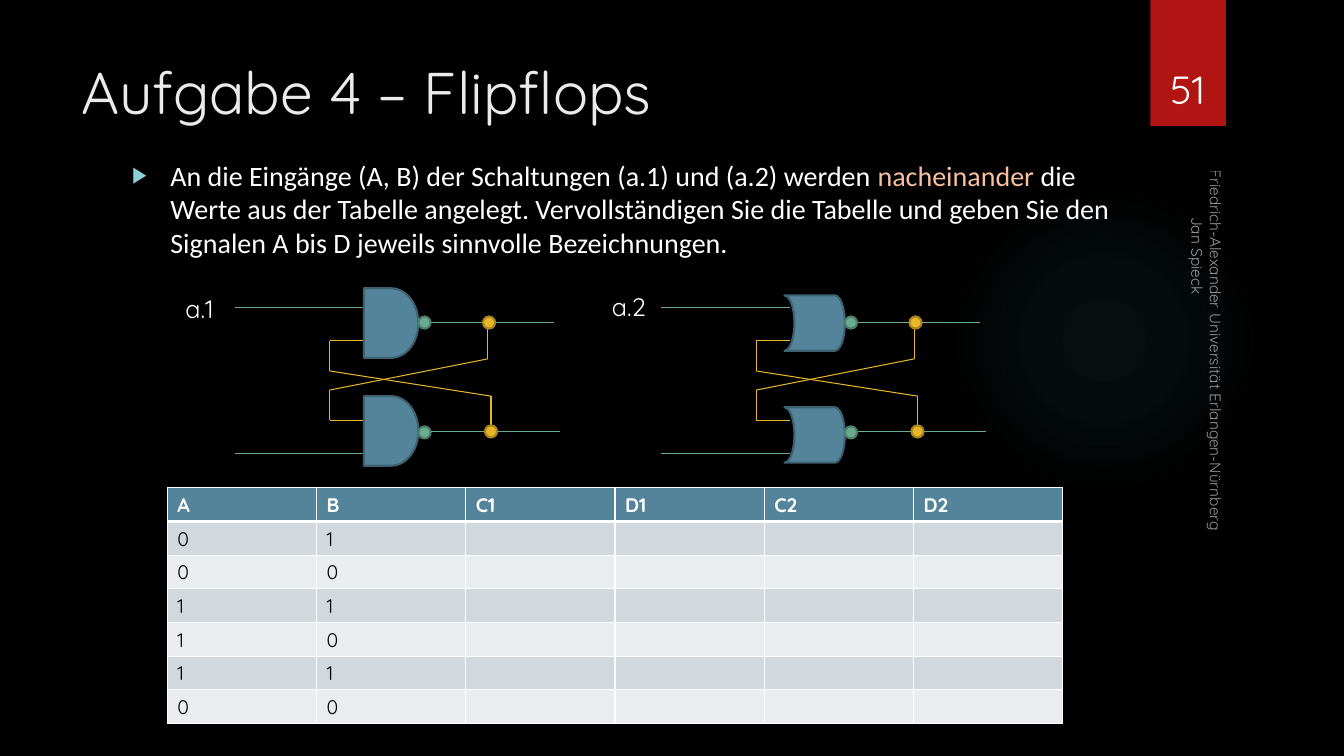
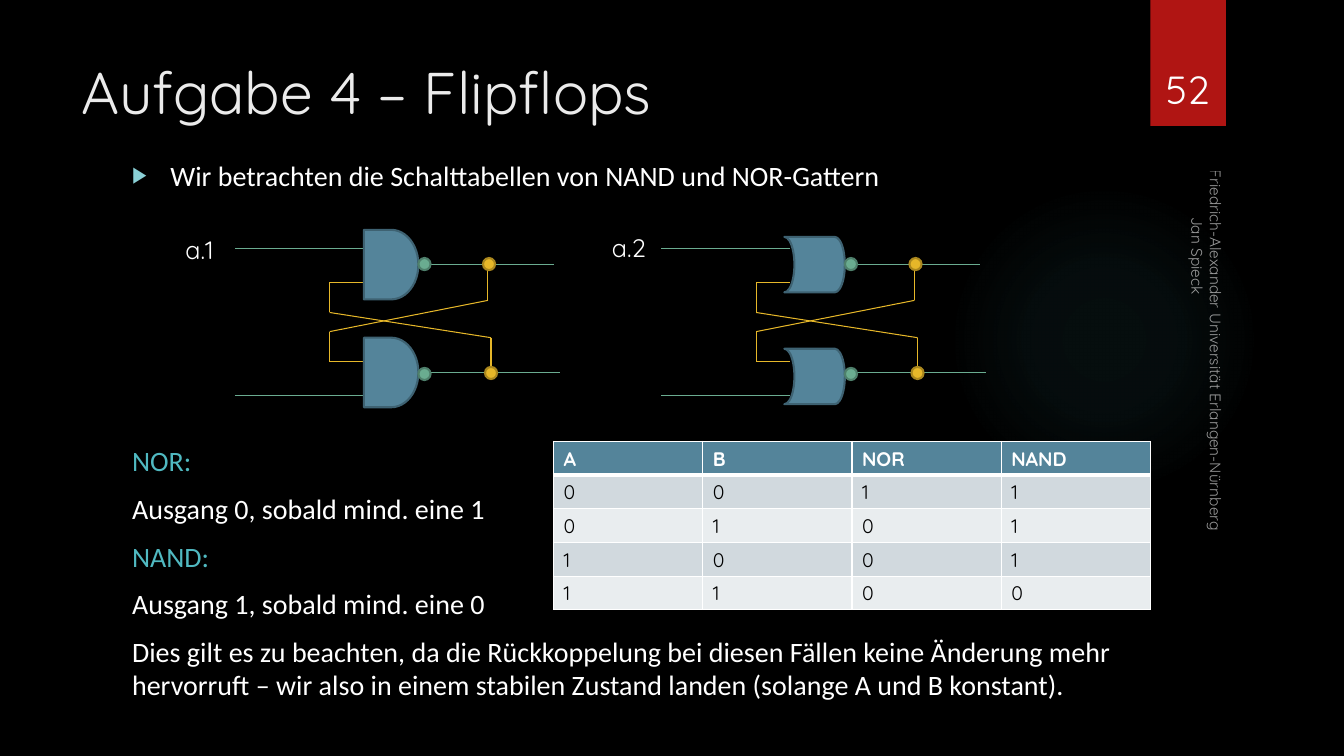
from itertools import pairwise

from lxml.etree import SubElement
from pptx import Presentation
from pptx.dml.color import RGBColor
from pptx.enum.shapes import MSO_CONNECTOR, MSO_SHAPE
from pptx.enum.text import MSO_ANCHOR, MSO_AUTO_SIZE, PP_ALIGN
from pptx.oxml import parse_xml
from pptx.oxml.ns import nsdecls, qn
from pptx.util import Emu, Pt

EMU_PER_PX = 9144  # 100 px to the inch

# Shared style
HEAD_FONT, BODY_FONT = "Quicksand", "Calibri"
BLACK, WHITE, TITLE = "000000", "FFFFFF", "EBEBEB"
RED, TEAL, BULLET, ACCENT = "B01513", "50B9C1", "8AD0D6", "F8C09F"
BLUE, BLUE_EDGE = "54849A", "3E6272"
GREEN, GREEN_EDGE = "6AAC90", "4E7F6B"
YELLOW, YELLOW_EDGE = "E6B729", "AA871E"
BANDS = ("E9EDEF", "D1D9DE")

# Gate: preset shape, left, tops, width, height, mirrored, label top
NAND = (MSO_SHAPE.FLOWCHART_DELAY, 128, (-19, 88), 54, 69, False, -19)
NOR = (MSO_SHAPE.FLOWCHART_STORED_DATA, 122, (-12, 99), 60, 55, True, -21)


def px(value):
    return Emu(value * EMU_PER_PX)


def rgb(code):
    return RGBColor.from_string(code)


def write(para, text, size=20, color=WHITE, font=BODY_FONT, bold=False,
          align=PP_ALIGN.LEFT, before=0, alpha=None):
    """Add one span of formatted text to a paragraph."""
    para.alignment = align
    para.space_before = Pt(before)
    span = para.add_run()
    span.text = text
    span.font.size = Pt(size)
    span.font.name = font
    span.font.bold = bold
    span.font.color.rgb = rgb(color)
    if alpha is not None:
        tint = span.font.fill._xPr.find(qn("a:solidFill"))[0]
        SubElement(tint, qn("a:alpha"), val=str(alpha * 1000))


def set_bullet(para, indent=38):
    """Give a paragraph a coloured triangle, or none when indent is 0."""
    props = para._p.get_or_add_pPr()
    props.set("marL", str(px(indent)))
    props.set("indent", str(px(-indent)))
    if not indent:
        SubElement(props, qn("a:buNone"))
        return
    tint = SubElement(props, qn("a:buClr"))
    SubElement(tint, qn("a:srgbClr"), val=BULLET)
    SubElement(props, qn("a:buSzPct"), val="80000")
    SubElement(props, qn("a:buFont"), typeface=BODY_FONT)
    SubElement(props, qn("a:buChar"), char="▶")


class Deck:
    def __init__(self):
        self.file = Presentation()
        self.file.slide_width, self.file.slide_height = px(1333), px(750)
        background = self.file.slide_master.background.fill
        background.solid()
        background.fore_color.rgb = rgb(BLACK)
        self.page = None

    # Page frame: glow, red band, title, footer, number
    def add_page(self, title, number):
        self.page = self.file.slides.add_slide(self.file.slide_layouts[1])
        self.glow()
        self.band()
        frame = self.placeholder(0, 71, 50, 1029, 153)
        write(frame.paragraphs[0], title, 42, TITLE, HEAD_FONT)
        self.footer()
        frame = self.text_box(1132, 32, 92, 84, anchor=MSO_ANCHOR.BOTTOM)
        write(frame.paragraphs[0], number, 28, font=HEAD_FONT,
              align=PP_ALIGN.CENTER)

    def glow(self):
        disc = self.shape(MSO_SHAPE.OVAL, 941, 183, 308, 308)
        stops = "".join(
            f'<a:gs pos="{place * 1000}"><a:srgbClr val="{TEAL}">'
            f'<a:alpha val="{alpha * 1000}"/></a:srgbClr></a:gs>'
            for place, alpha in ((0, 7), (36, 6), (69, 0)))
        gradient = parse_xml(
            f'<a:gradFill {nsdecls("a")}><a:gsLst>{stops}</a:gsLst>'
            '<a:path path="circle"><a:fillToRect l="50000" t="50000" '
            'r="50000" b="50000"/></a:path></a:gradFill>')
        props = disc._element.spPr
        props.replace(props.find(qn("a:noFill")), gradient)

    def band(self):
        band = self.shape(MSO_SHAPE.RECTANGLE, 1141, 0, 75, 125, RED)
        effects = band._element.spPr.find(qn("a:effectLst"))
        shadow = SubElement(effects, qn("a:outerShdw"), blurRad=str(Pt(3)),
                            dist=str(Pt(2)), dir="5400000")
        tint = SubElement(shadow, qn("a:srgbClr"), val=BLACK)
        SubElement(tint, qn("a:alpha"), val="45000")

    def footer(self):
        frame = self.text_box(979, 353, 422, 33, anchor=MSO_ANCHOR.BOTTOM,
                              turn=90)
        school, author = frame.paragraphs[0], frame.add_paragraph()
        author._p.get_or_add_pPr().set("marL", str(px(47)))
        for para, text in (
                (school, "Friedrich-Alexander Universität Erlangen-Nürnberg"),
                (author, "Jan Spieck")):
            write(para, text, 11, font=HEAD_FONT, alpha=60)

    # Text
    def placeholder(self, index, left, top, width, height):
        box = self.page.placeholders[index]
        box.left, box.top = px(left), px(top)
        box.width, box.height = px(width), px(height)
        frame = box.text_frame
        frame.auto_size = MSO_AUTO_SIZE.NONE
        frame.vertical_anchor = MSO_ANCHOR.TOP
        return frame

    def body(self, paragraphs):
        """Each paragraph: bullet indent, space before, (text, colour) spans."""
        frame = self.placeholder(1, 121, 152, 998, 551)
        for number, (indent, before, spans) in enumerate(paragraphs):
            para = frame.add_paragraph() if number else frame.paragraphs[0]
            set_bullet(para, indent)
            for text, color in spans:
                write(para, text, color=color, before=before)

    def text_box(self, left, top, width, height, anchor=MSO_ANCHOR.TOP,
                 wrap=True, turn=0):
        box = self.page.shapes.add_textbox(
            px(left), px(top), px(width), px(height))
        box.rotation = turn
        frame = box.text_frame
        frame.word_wrap = wrap
        frame.vertical_anchor = anchor
        return frame

    # Shapes and wires
    def shape(self, kind, left, top, width, height, fill=None, edge=None):
        shape = self.page.shapes.add_shape(
            kind, px(left), px(top), px(width), px(height))
        shape.shadow.inherit = False
        if fill:
            shape.fill.solid()
            shape.fill.fore_color.rgb = rgb(fill)
        else:
            shape.fill.background()
        if edge:
            shape.line.color.rgb = rgb(edge)
            shape.line.width = Pt(1.5)
        else:
            shape.line.fill.background()
        return shape

    def wire(self, color, left, top, *points):
        for (x1, y1), (x2, y2) in pairwise(points):
            line = self.page.shapes.add_connector(
                MSO_CONNECTOR.STRAIGHT, px(left + x1), px(top + y1),
                px(left + x2), px(top + y2))
            line.line.color.rgb = rgb(color)
            line.line.width = Pt(0.75)
            SubElement(line._element.spPr, qn("a:effectLst"))

    # Flip-flop whose upper input starts at left, top
    def flipflop(self, label, gate, left, top):
        kind, gate_left, gate_tops, width, height, mirrored, label_top = gate
        for points in (((0, 0), (128, 0)), ((0, 145), (128, 145)),
                       ((188, 15), (316, 15)), ((194, 123), (322, 123))):
            self.wire(GREEN, left, top, *points)
        self.wire(YELLOW, left, top,
                  (251, 21), (251, 51), (94, 82), (94, 112), (128, 112))
        self.wire(YELLOW, left, top,
                  (254, 117), (254, 88), (94, 63), (94, 33), (128, 33))
        for gate_top in gate_tops:
            symbol = self.shape(kind, left + gate_left, top + gate_top,
                                width, height, BLUE, BLUE_EDGE)
            if mirrored:
                symbol._element.spPr.find(qn("a:xfrm")).set("flipH", "1")
        for x, y, fill, edge in ((182, 9, GREEN, GREEN_EDGE),
                                 (182, 118, GREEN, GREEN_EDGE),
                                 (246, 9, YELLOW, YELLOW_EDGE),
                                 (248, 117, YELLOW, YELLOW_EDGE)):
            self.shape(MSO_SHAPE.OVAL, left + x, top + y, 12, 12, fill, edge)
        frame = self.text_box(left - 59, top + label_top, 58, 40, wrap=False)
        write(frame.paragraphs[0], label, 18, font=HEAD_FONT)

    def flipflops(self, top):
        self.flipflop("a.1", NAND, 233, top)
        self.flipflop("a.2", NOR, 656, top)

    # Truth table; short rows leave the remaining cells empty
    def table(self, left, top, header, rows):
        grid = self.page.shapes.add_table(
            len(rows) + 1, len(header), px(left), px(top),
            px(148 * len(header)), px(33 * (len(rows) + 1))).table
        for column in grid.columns:
            column.width = px(148)
        for r, values in enumerate([header, *rows]):
            grid.rows[r].height = px(33)
            for c in range(len(header)):
                cell = grid.cell(r, c)
                self.borders(cell, top=3 if r == 1 else 1,
                             bottom=1 if r else 3)
                cell.fill.solid()
                cell.fill.fore_color.rgb = rgb(BANDS[r % 2] if r else BLUE)
                para = cell.text_frame.paragraphs[0]
                if c < len(values):
                    write(para, values[c], 14, BLACK if r else WHITE,
                          HEAD_FONT, bold=r == 0)
                else:
                    mark = SubElement(para._p, qn("a:endParaRPr"), sz="1400")
                    SubElement(mark, qn("a:latin"), typeface=HEAD_FONT)

    def borders(self, cell, top, bottom):
        props = cell._tc.get_or_add_tcPr()
        for side, width in (("L", 1), ("R", 1), ("T", top), ("B", bottom)):
            line = SubElement(props, qn(f"a:ln{side}"), w=str(Pt(width)))
            fill = SubElement(line, qn("a:solidFill"))
            SubElement(fill, qn("a:srgbClr"), val=WHITE)


def main():
    deck = Deck()
    title = "Aufgabe 4 – Flipflops"

    # Task
    deck.add_page(title, "51")
    deck.body([(38, 0, [
        ("An die Eingänge (A, B) der Schaltungen (a.1) und (a.2) werden ",
         WHITE),
        ("nacheinander", ACCENT),
        (" die Werte aus der Tabelle angelegt. Vervollständigen Sie die "
         "Tabelle und geben Sie den Signalen A bis D jeweils sinnvolle "
         "Bezeichnungen.", WHITE)])])
    deck.flipflops(305)
    deck.table(166, 484, ["A", "B", "C1", "D1", "C2", "D2"],
               ["01", "00", "11", "10", "11", "00"])

    # Gate behaviour
    deck.add_page(title, "52")
    deck.body([
        (38, 0, [("Wir betrachten die Schalttabellen von NAND und "
                  "NOR-Gattern", WHITE)]),
        (0, 180, [("NOR:", TEAL)]),
        (0, 10, [("Ausgang 0, sobald mind. eine 1", WHITE)]),
        (0, 10, [("NAND:", TEAL)]),
        (0, 10, [("Ausgang 1, sobald mind. eine 0", WHITE)]),
        (0, 10, [("Dies gilt es zu beachten, da die Rückkoppelung bei diesen "
                  "Fällen keine Änderung mehr hervorruft – wir also in einem "
                  "stabilen Zustand landen (solange A und B konstant).",
                  WHITE)])])
    deck.flipflops(247)
    deck.table(549, 438, ["A", "B", "NOR", "NAND"],
               ["0011", "0101", "1001", "1100"])

    deck.file.save("out.pptx")


if __name__ == "__main__":
    main()
